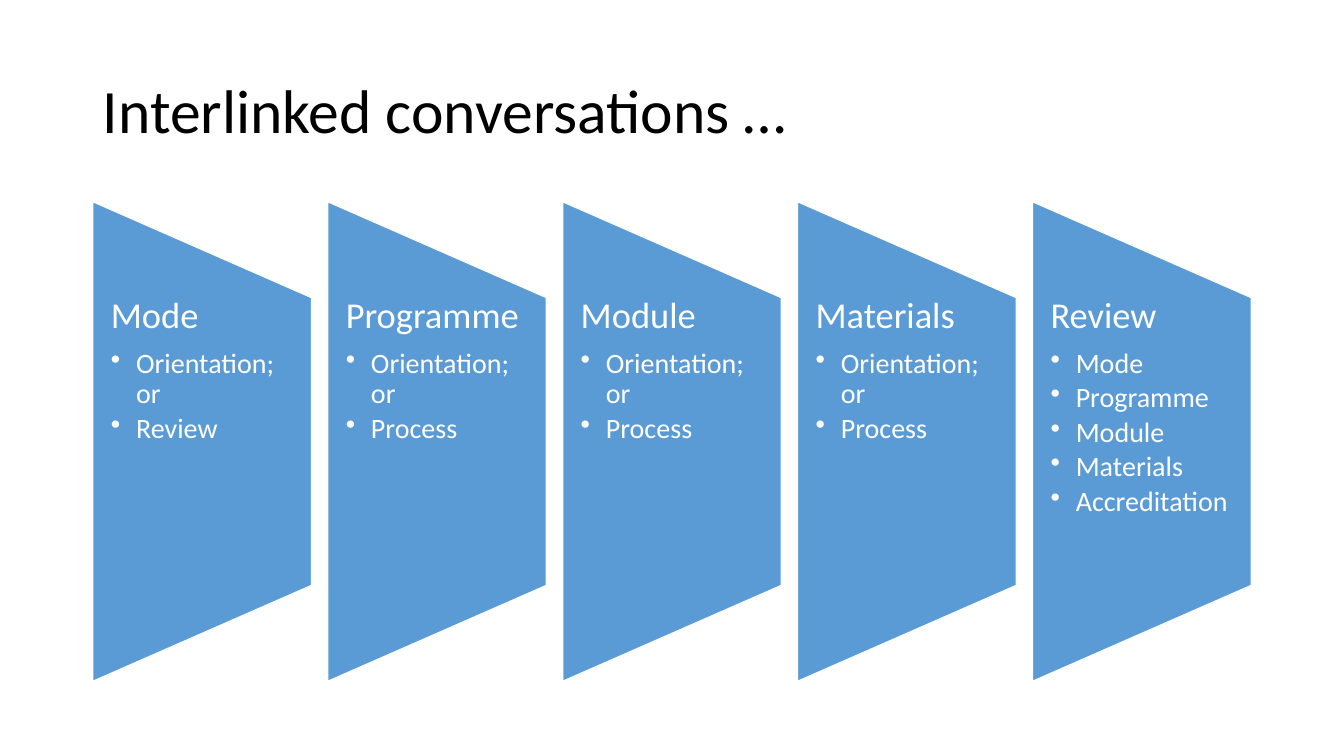
from lxml import etree
from pptx import Presentation
from pptx import util as u
from pptx.dml.color import RGBColor
from pptx.enum import shapes, text
from pptx.oxml.ns import qn

WIDTH, HEIGHT = 13.33, 7.5
LEFT, PITCH, PANEL_W = 0.92, 2.33, 2.17
PANEL_TOP, PANEL_H = 2.0, 4.76
TEXT_TOP, TEXT_H = 2.95, 2.86
BLUE, WHITE, BLACK = "5B9BD5", "FFFFFF", "000000"

STAGES = [
    ("Mode", ["Orientation; or", "Review"]),
    ("Programme", ["Orientation; or", "Process"]),
    ("Module", ["Orientation; or", "Process"]),
    ("Materials", ["Orientation; or", "Process"]),
    ("Review", ["Mode", "Programme", "Module", "Materials", "Accreditation"]),
]


def color(value):
    """Turn a hex string into a colour."""
    return RGBColor.from_string(value)


def place(sp, left, top, width, height):
    """Set a shape's frame in inches."""
    sp.left, sp.top = u.Inches(left), u.Inches(top)
    sp.width, sp.height = u.Inches(width), u.Inches(height)


def write(p, words, size=20, fill=WHITE, after=0, bullet=False):
    """Fill a paragraph with formatted text."""
    p.alignment = text.PP_ALIGN.LEFT
    p.line_spacing = 0.9
    p.space_before, p.space_after = u.Pt(0), u.Pt(after)
    r = p.add_run()
    r.text = words
    r.font.name, r.font.size = "Calibri", u.Pt(size)
    r.font.color.rgb = color(fill)
    if bullet:
        p.level = 1
        pPr = p._p.get_or_add_pPr()
        pPr.set("marL", str(u.Inches(0.25)))
        pPr.set("indent", str(u.Inches(-0.25)))
        etree.SubElement(pPr, qn("a:buChar")).set("char", "•")


def add_title(s, words):
    """Format the title placeholder."""
    sp = s.shapes.title
    place(sp, LEFT, 0.4, 11.5, 1.45)
    tf = sp.text_frame
    tf.vertical_anchor = text.MSO_ANCHOR.MIDDLE
    write(tf.paragraphs[0], words, size=44, fill=BLACK)


def add_panel(group, left):
    """Draw a trapezoid turned so that it narrows to the right."""
    shift = (PANEL_H - PANEL_W) / 2
    sp = group.shapes.add_shape(
        shapes.MSO_SHAPE.FLOWCHART_MANUAL_OPERATION, 0, 0, 0, 0)
    place(sp, left - shift, PANEL_TOP + shift, PANEL_H, PANEL_W)
    sp.rotation = 270
    sp.shadow.inherit = False
    sp.fill.solid()
    sp.fill.fore_color.rgb = color(BLUE)
    sp.line.color.rgb = color(WHITE)
    sp.line.width = u.Pt(1)


def add_stage_text(group, left, heading, items):
    """Write a stage's heading and bullets over its panel."""
    sp = group.shapes.add_textbox(0, 0, 0, 0)
    place(sp, left, TEXT_TOP, PANEL_W, TEXT_H)
    tf = sp.text_frame
    tf.word_wrap = True
    tf.margin_left = tf.margin_right = u.Inches(0.18)
    tf.margin_top = tf.margin_bottom = 0
    write(tf.paragraphs[0], heading, size=26, after=9)
    for item in items:
        write(tf.add_paragraph(), item, after=3, bullet=True)


def main():
    """Build and save the slide."""
    prs = Presentation()
    prs.slide_width, prs.slide_height = u.Inches(WIDTH), u.Inches(HEIGHT)
    s = prs.slides.add_slide(prs.slide_layouts.get_by_name("Title Only"))
    add_title(s, "Interlinked conversations …")
    group = s.shapes.add_group_shape()
    for column, (heading, items) in enumerate(STAGES):
        left = LEFT + column * PITCH
        add_panel(group, left)
        add_stage_text(group, left, heading, items)
    place(group, LEFT, PANEL_TOP, PITCH * (len(STAGES) - 1) + PANEL_W, PANEL_H)
    xfrm = group._element.grpSpPr.find(qn("a:xfrm"))
    for child, source in (("a:chOff", "a:off"), ("a:chExt", "a:ext")):
        xfrm.find(qn(child)).attrib.update(xfrm.find(qn(source)).attrib)
    prs.save("out.pptx")


if __name__ == "__main__":
    main()
